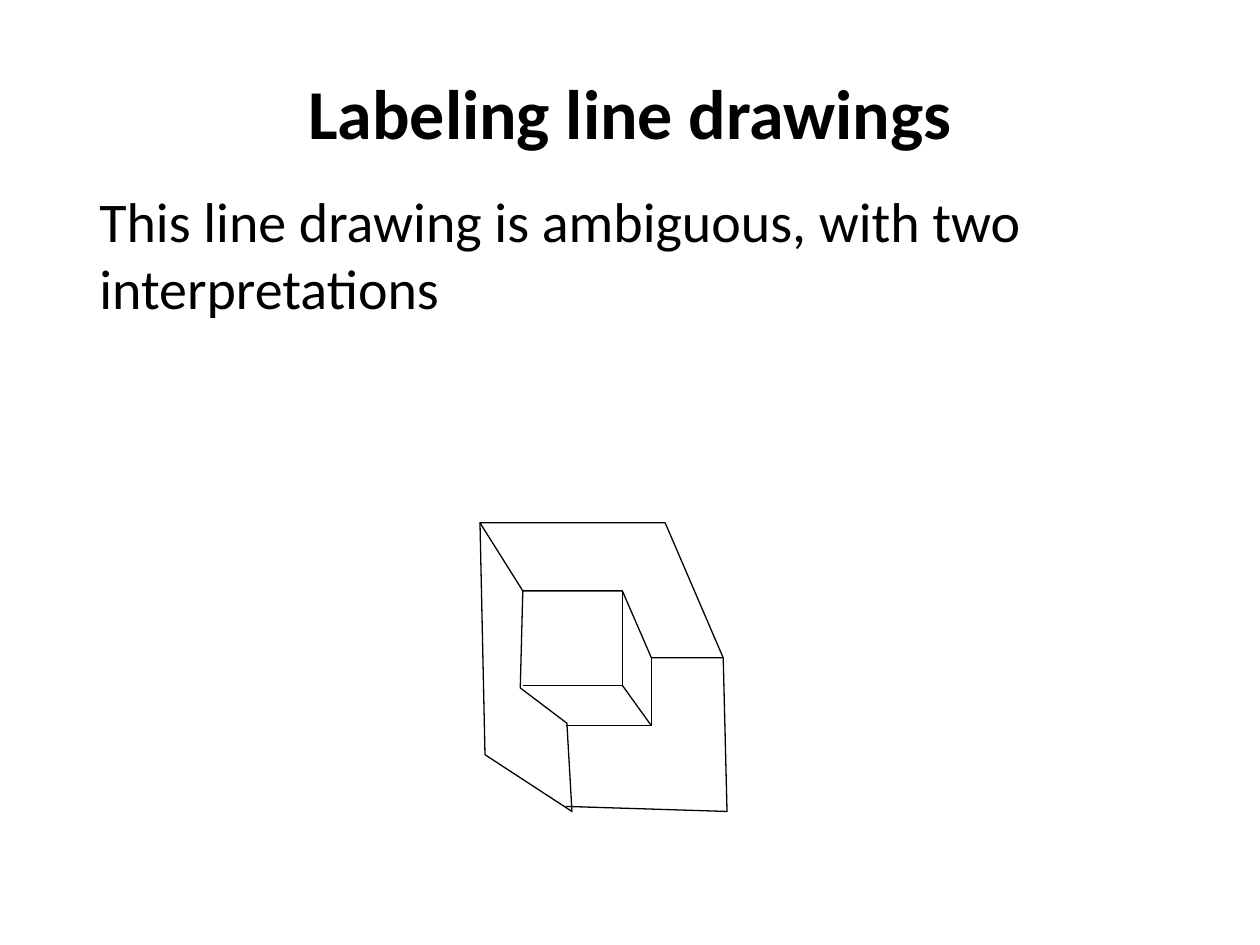
from dataclasses import dataclass

from lxml.etree import SubElement
from pptx import Presentation
from pptx.dml.color import RGBColor
from pptx.enum.shapes import MSO_CONNECTOR
from pptx.enum.text import MSO_ANCHOR, PP_ALIGN
from pptx.oxml.ns import qn
from pptx.util import Inches, Pt


@dataclass(frozen=True)
class Theme:
    """Hold the colours, font and sizes of the slide."""
    ink: RGBColor = RGBColor(0, 0, 0)
    paper: RGBColor = RGBColor(255, 255, 255)
    font: str = "Calibri"
    title_size: float = 40
    body_size: float = 32
    edge_width: float = 0.75


def write_text(frame, text, *, font, size, color, bold=False,
               align=PP_ALIGN.LEFT, anchor=MSO_ANCHOR.TOP):
    """Fill a text frame with one formatted paragraph."""
    frame.word_wrap = True
    frame.vertical_anchor = anchor
    paragraph = frame.paragraphs[0]
    paragraph.alignment = align
    paragraph.space_before = Pt(0)
    run = paragraph.add_run()
    run.text = text
    run.font.name = font
    run.font.size = Pt(size)
    run.font.bold = bold
    run.font.color.rgb = color


class DrawingSlide:
    """Draw on one slide with a grid of 100 columns by 75 rows."""
    COLUMNS, ROWS = 100, 75

    def __init__(self, presentation, theme):
        """Add a title-only slide to the presentation."""
        self.theme = theme
        self.column = presentation.slide_width / self.COLUMNS
        self.row = presentation.slide_height / self.ROWS
        self.slide = presentation.slides.add_slide(presentation.slide_layouts[5])
        background = self.slide.background.fill
        background.solid()
        background.fore_color.rgb = theme.paper
        self.solid = self.slide.shapes.add_group_shape()

    def place(self, column, row):
        """Turn a grid position into slide units."""
        return round(column * self.column), round(row * self.row)

    def title(self, text, corner, extent):
        """Move and fill the title placeholder."""
        heading = self.slide.shapes.title
        heading.left, heading.top = self.place(*corner)
        heading.width, heading.height = self.place(*extent)
        write_text(heading.text_frame, text, font=self.theme.font,
                   size=self.theme.title_size, color=self.theme.ink, bold=True,
                   align=PP_ALIGN.CENTER, anchor=MSO_ANCHOR.MIDDLE)

    def statement(self, text, corner, extent):
        """Add a block of body text."""
        box = self.slide.shapes.add_textbox(*self.place(*corner), *self.place(*extent))
        write_text(box.text_frame, text, font=self.theme.font,
                   size=self.theme.body_size, color=self.theme.ink)

    def ink_edge(self, line):
        """Give a line the theme's edge style."""
        line.color.rgb = self.theme.ink
        line.width = Pt(self.theme.edge_width)

    def outline(self, *corners, closed=False):
        """Draw a chain of edges, filled when it is a closed face."""
        start, *others = [self.place(*corner) for corner in corners]
        builder = self.solid.shapes.build_freeform(*start, scale=1.0)
        builder.add_line_segments(others, close=closed)
        face = builder.convert_to_shape()
        face.shadow.inherit = False
        if closed:
            face.fill.solid()
            face.fill.fore_color.rgb = self.theme.paper
        else:
            face.fill.background()
        self.ink_edge(face.line)

    def edge(self, start, end):
        """Draw one straight edge."""
        connector = self.solid.shapes.add_connector(
            MSO_CONNECTOR.STRAIGHT, *self.place(*start), *self.place(*end))
        self.ink_edge(connector.line)
        SubElement(connector._element.spPr, qn("a:effectLst"))


def main():
    """Build the line drawing slide."""
    presentation = Presentation()
    presentation.slide_width, presentation.slide_height = Inches(10), Inches(7.5)
    page = DrawingSlide(presentation, Theme())
    page.title("Labeling line drawings", (7.5, 2.6), (85, 12.5))
    page.statement("This line drawing is ambiguous, with two interpretations",
                   (6.9, 14.3), (88.4, 13.9))

    back_left, back_right = (38.1, 41.5), (52.8, 41.5)
    front_right, front_notch = (57.4, 52.2), (51.7, 52.2)
    notch_left, notch_right = (41.5, 46.9), (49.4, 46.9)
    floor_left, floor_right = (41.5, 54.4), (49.4, 54.4)
    step_left, step_right = (44.9, 57.6), (51.7, 57.6)

    page.outline(back_left, back_right, front_right, front_notch,
                 notch_right, notch_left, closed=True)
    page.outline(back_left, (38.5, 59.9), (45.4, 64.4), (45, 57.4),
                 (41.3, 54.6), notch_left)
    page.outline(floor_left, floor_right, notch_right)
    page.outline(front_right, (57.7, 64.4), (44.9, 64))
    page.outline(step_left, step_right, front_notch)
    page.edge(floor_right, step_right)
    presentation.save("out.pptx")


if __name__ == "__main__":
    main()
